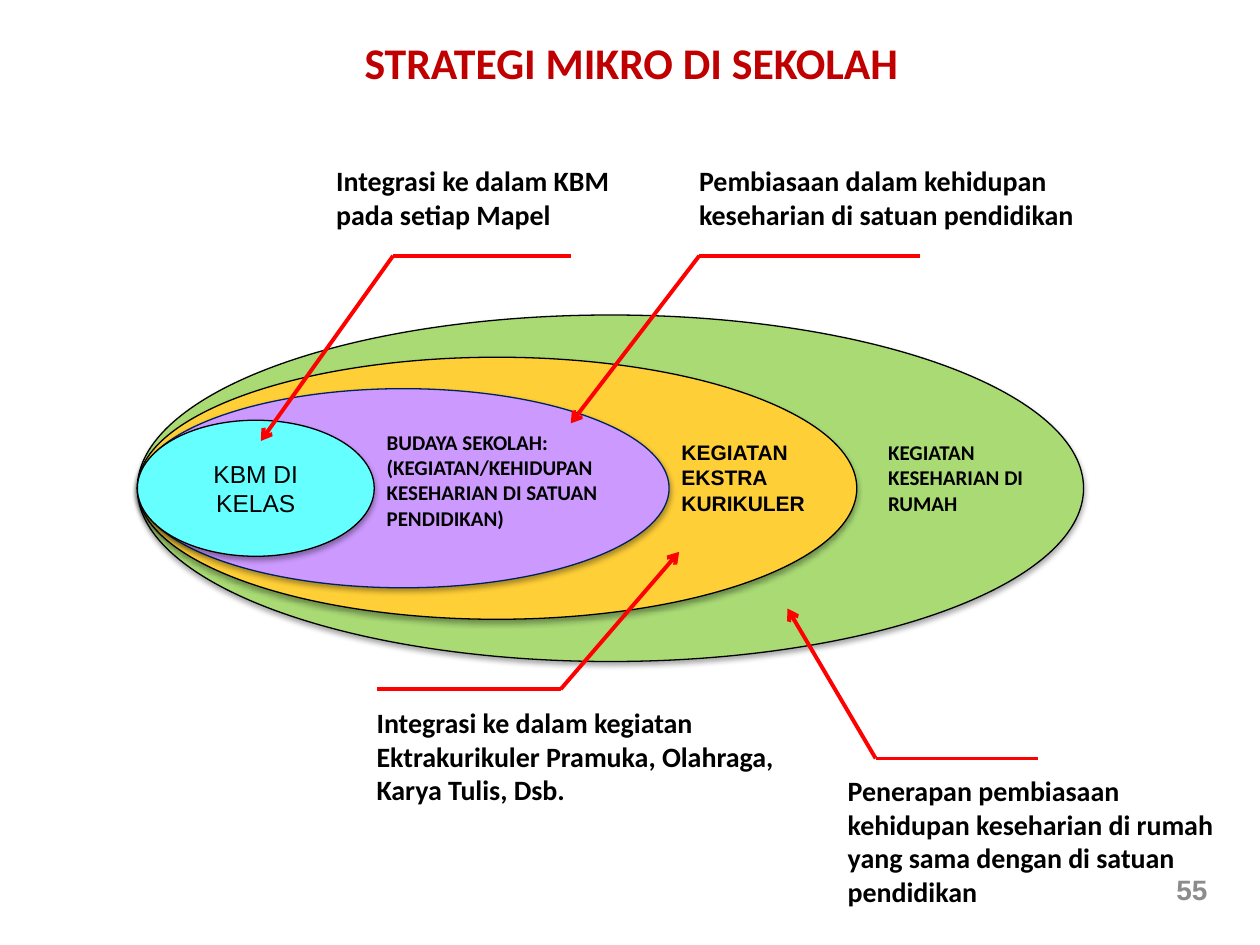
from lxml.etree import SubElement
from pptx import Presentation
from pptx.dml.color import RGBColor
from pptx.enum.shapes import MSO_CONNECTOR as Connector, MSO_SHAPE as Shape
from pptx.enum.text import MSO_ANCHOR as Anchor, PP_ALIGN as Align
from pptx.oxml.ns import qn
from pptx.util import Inches, Pt

COLORS = {
    "title": "C00000",
    "text": "000000",
    "number": "8C8C8C",
    "arrow": "FF0000",
    "outline": "000000",
    "culture_outline": "002060",
    "home": "A9DA74",
    "extracurricular": "FFCF37",
    "culture": "CC99FF",
    "class": "65FFFF",
}


def rgb(name):
    return RGBColor.from_string(COLORS[name])


def write(frame, lines, size, font="Calibri", color="text", bold=True,
          align=Align.LEFT, anchor=Anchor.TOP):
    frame.word_wrap = True
    frame.vertical_anchor = anchor
    for index, line in enumerate(lines):
        paragraph = frame.paragraphs[0] if index == 0 else frame.add_paragraph()
        paragraph.text = line
        paragraph.alignment = align
        paragraph.font.name = font
        paragraph.font.size = Pt(size)
        paragraph.font.bold = bold
        paragraph.font.color.rgb = rgb(color)


def add_text(slide, box, lines, size, **style):
    textbox = slide.shapes.add_textbox(*map(Inches, box))
    write(textbox.text_frame, lines, size, **style)


def add_soft_shadow(shape):
    shape.shadow.inherit = False
    effects = shape._element.spPr.find(qn("a:effectLst"))
    shadow = SubElement(effects, qn("a:outerShdw"), blurRad=str(Pt(3.1)),
                        dist=str(Pt(1.8)), dir="5400000", rotWithShape="0")
    tone = SubElement(shadow, qn("a:srgbClr"), val=COLORS["outline"])
    SubElement(tone, qn("a:alpha"), val="35000")


def add_line(slide, start, end, arrow=False):
    line = slide.shapes.add_connector(
        Connector.STRAIGHT, *map(Inches, (*start, *end)))
    line.line.color.rgb = rgb("arrow")
    line.line.width = Pt(2.25)
    if arrow:
        SubElement(line.line._get_or_add_ln(), qn("a:tailEnd"), type="arrow")
    SubElement(line._element.spPr, qn("a:effectLst"))


def add_ring(slide, box, fill, outline="outline"):
    ring = slide.shapes.add_shape(Shape.OVAL, *map(Inches, box))
    ring.fill.solid()
    ring.fill.fore_color.rgb = rgb(fill)
    ring.line.color.rgb = rgb(outline)
    ring.line.width = Pt(0.75)
    add_soft_shadow(ring)
    return ring


def add_nested_rings(slide, box):
    left, top, width, height = box
    middle = top + height / 2
    rings = [
        (width, height, "home", "outline"),
        (5.71, 2.08, "extracurricular", "outline"),
        (4.22, 1.58, "culture", "culture_outline"),
        (1.88, 1.08, "class", "outline"),
    ]
    for ring_width, ring_height, fill, outline in rings:
        ring_box = (left, middle - ring_height / 2, ring_width, ring_height)
        innermost = add_ring(slide, ring_box, fill, outline)
    write(innermost.text_frame, ["KBM DI KELAS"], 14, font="Arial", bold=False,
          align=Align.CENTER, anchor=Anchor.MIDDLE)

    labels = [
        (5.86, 0.94, 1.41, 0.71, "Calibri",
         ["KEGIATAN", "KESEHARIAN DI RUMAH"]),
        (4.22, 0.94, 1.41, 0.71, "Arial",
         ["KEGIATAN", "EKSTRA KURIKULER"]),
        (1.88, 0.86, 2.19, 0.91, "Calibri",
         ["BUDAYA SEKOLAH: (KEGIATAN/KEHIDUPAN",
          "KESEHARIAN DI SATUAN PENDIDIKAN)"]),
    ]
    for dx, dy, label_width, label_height, font, lines in labels:
        add_text(slide, (left + dx, top + dy, label_width, label_height),
                 lines, 12, font=font)


def add_callout(slide, box, text, rule_y, rule_end, elbow, tip):
    left, top = box[:2]
    corner = (left + elbow, top + rule_y)
    add_text(slide, box, [text], 16)
    add_line(slide, corner, (left + rule_end, top + rule_y))
    add_line(slide, corner, (left + tip[0], top + tip[1]), arrow=True)


def add_title(slide, box):
    add_text(slide, box, ["STRATEGI MIKRO DI SEKOLAH"], 25, color="title",
             align=Align.CENTER, anchor=Anchor.MIDDLE)


def add_page_number(slide, box):
    add_text(slide, box, ["55"], 16, font="Arial", color="number",
             align=Align.RIGHT, anchor=Anchor.MIDDLE)


def main():
    deck = Presentation()
    deck.slide_width, deck.slide_height = Inches(10), Inches(7.5)
    slide = deck.slides.add_slide(deck.slide_layouts[6])

    add_title(slide, (0.6, 0.23, 8.82, 0.52))
    add_nested_rings(slide, (1.09, 2.5, 7.51, 2.75))
    callouts = [
        ((2.57, 1.25, 2.74, 0.64),
         "Integrasi ke dalam KBM pada setiap Mapel",
         0.78, 1.96, 0.55, (-0.5, 2.25)),
        ((5.45, 1.25, 3.84, 0.64),
         "Pembiasaan dalam kehidupan keseharian di satuan pendidikan",
         0.78, 1.85, 0.1, (-0.92, 2.11)),
        ((2.89, 5.55, 3.52, 0.91),
         "Integrasi ke dalam kegiatan Ektrakurikuler Pramuka, Olahraga, "
         "Karya Tulis, Dsb.",
         -0.08, 0.1, 1.56, (2.5, -1.17)),
        ((6.63, 6.09, 3.14, 1.18),
         "Penerapan pembiasaan kehidupan keseharian di rumah yang sama "
         "dengan di satuan pendidikan",
         -0.07, 1.61, 0.32, (-0.38, -1.26)),
    ]
    for callout in callouts:
        add_callout(slide, *callout)
    add_page_number(slide, (9.14, 6.88, 0.54, 0.35))

    deck.save("out.pptx")


if __name__ == "__main__":
    main()
